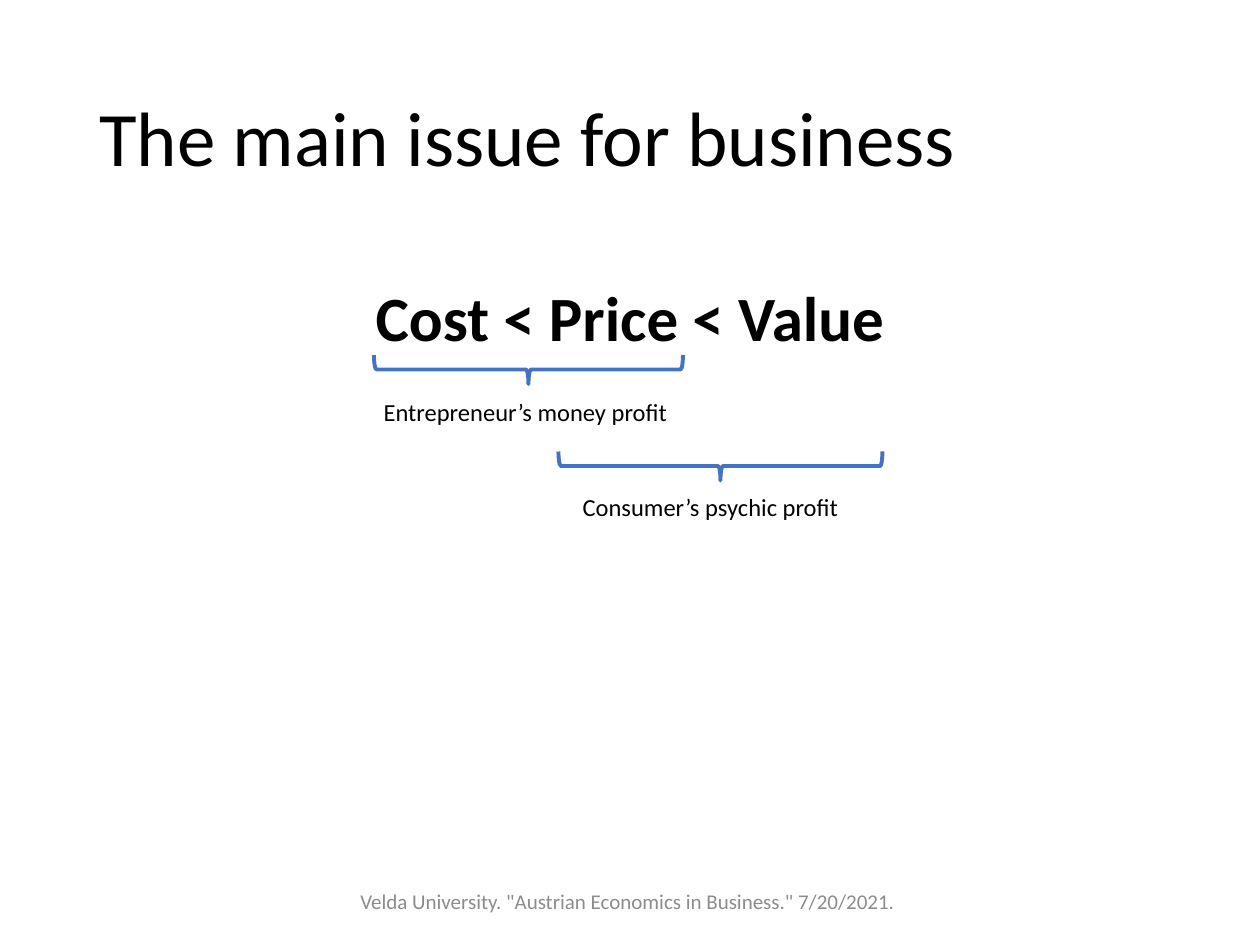
from pptx import Presentation
from pptx.dml.color import RGBColor
from pptx.enum.shapes import MSO_SHAPE
from pptx.enum.text import MSO_ANCHOR, PP_ALIGN
from pptx.util import Pt

PX = 914400 // 126
BLACK, GREY, BLUE = "000000", "8C8C8C", "4472C4"
LEFT, MIDDLE = PP_ALIGN.LEFT, PP_ALIGN.CENTER

TITLE = "The main issue for business"
FORMULA = "Cost < Price < Value"
FOOTER = "Velda University. \"Austrian Economics in Business.\" 7/20/2021. "
COLUMN_LEFT, COLUMN_WIDTH = 87, 1086
LABEL_WIDTH, LABEL_HEIGHT, BRACE_DEPTH = 343, 59, 29
PROFITS = [
    ("Entrepreneur’s money profit", 374, 683, 355, 394, 354),
    ("Consumer’s psychic profit", 559, 883, 452, 489, 539),
]


def color(value):
    return RGBColor.from_string(value)


def add_text(page, text, area, size, ink=BLACK, align=MIDDLE,
             anchor=MSO_ANCHOR.TOP, bold=False, spacing=0.9, before=0):
    box = page.shapes.add_textbox(*(value * PX for value in area))
    frame = box.text_frame
    frame.word_wrap = True
    frame.vertical_anchor = anchor
    para = frame.paragraphs[0]
    para.alignment = align
    para.line_spacing = spacing
    para.space_before = Pt(before)
    span = para.add_run()
    span.text = text
    span.font.name = "Calibri"
    span.font.size = Pt(size)
    span.font.bold = bold
    span.font.color.rgb = color(ink)


def add_brace(page, start, end, top):
    length = end - start
    left = (start + end - BRACE_DEPTH) // 2
    upper = top + (BRACE_DEPTH - length) // 2
    brace = page.shapes.add_shape(
        MSO_SHAPE.LEFT_BRACE, left * PX, upper * PX, BRACE_DEPTH * PX, length * PX)
    brace.rotation = 270
    brace.shadow.inherit = False
    brace.fill.background()
    brace.line.color.rgb = color(BLUE)
    brace.line.width = Pt(2.25)


def main():
    """Build the slide on cost, price and value."""
    deck = Presentation()
    deck.slide_width, deck.slide_height = 1260 * PX, 945 * PX
    page = deck.slides.add_slide(deck.slide_layouts[6])
    add_text(page, TITLE, (COLUMN_LEFT, 50, COLUMN_WIDTH, 183), 44,
             align=LEFT, anchor=MSO_ANCHOR.MIDDLE)
    add_text(page, FOOTER, (COLUMN_LEFT, 876, COLUMN_WIDTH, 50), 12, GREY,
             anchor=MSO_ANCHOR.MIDDLE, spacing=1.0)
    add_text(page, FORMULA, (COLUMN_LEFT, 281, COLUMN_WIDTH, 183), 36,
             bold=True, before=10)
    for label, start, end, brace_top, label_top, label_left in PROFITS:
        add_brace(page, start, end, brace_top)
        add_text(page, label, (label_left, label_top, LABEL_WIDTH, LABEL_HEIGHT),
                 14, before=10)
    deck.save("out.pptx")


if __name__ == "__main__":
    main()
